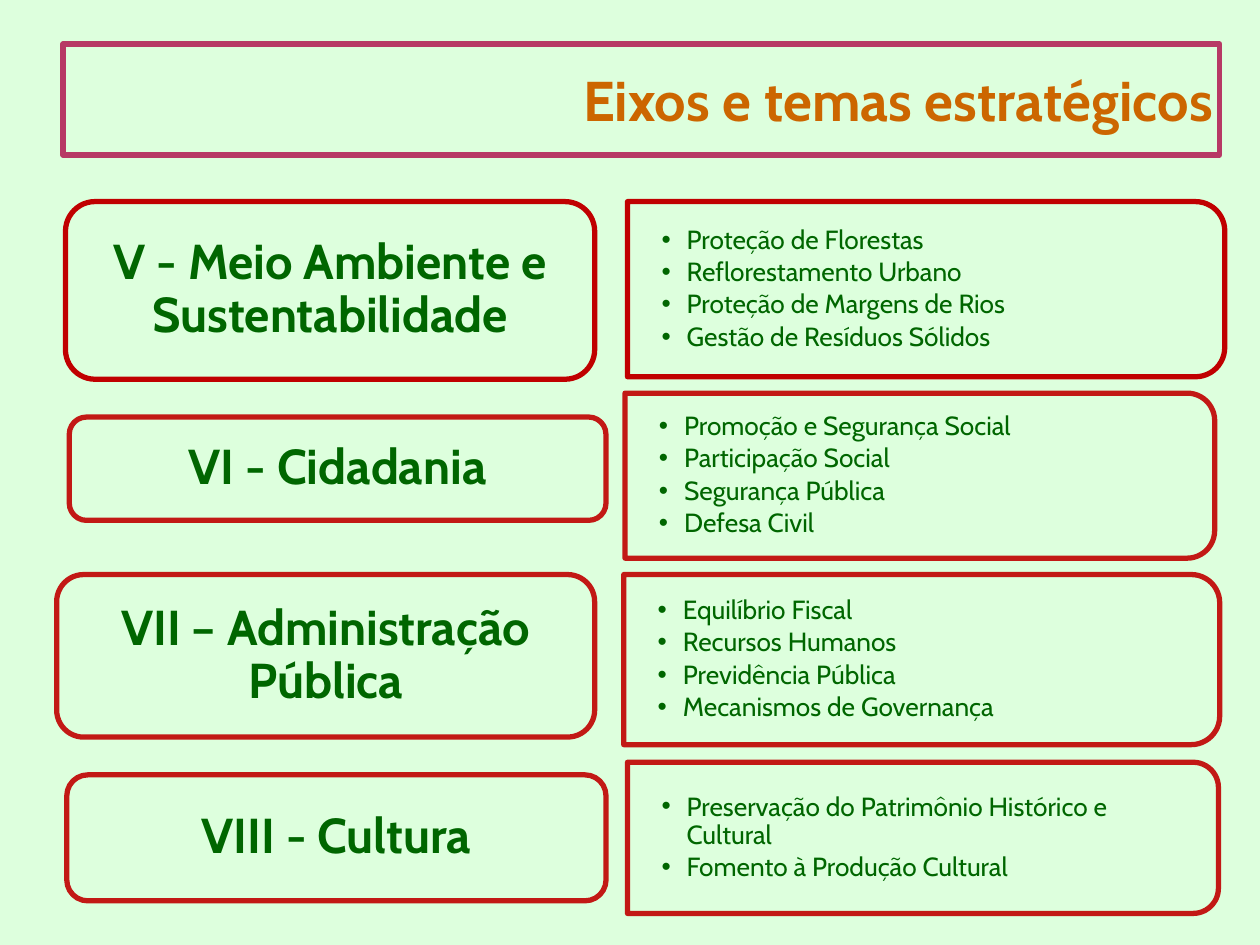
from dataclasses import dataclass

from lxml.etree import SubElement
from pptx import Presentation
from pptx.dml.color import RGBColor
from pptx.enum.shapes import MSO_SHAPE
from pptx.enum.text import MSO_ANCHOR, MSO_AUTO_SIZE, PP_ALIGN
from pptx.oxml.ns import qn
from pptx.util import Inches, Pt

FONT = "Cabin"
GREEN = "006600"
RED = "C00000"


@dataclass
class Box:
    left: float
    top: float
    width: float
    height: float


@dataclass
class Axis:
    name: str
    label: Box
    panel: Box
    themes: list[str]
    alpha: int = 90


AXES = [
    Axis("V - Meio Ambiente e Sustentabilidade",
         Box(0.52, 1.6, 4.2, 1.41), Box(4.98, 1.6, 4.74, 1.39),
         ["Proteção de Florestas", "Reflorestamento Urbano",
          "Proteção de Margens de Rios", "Gestão de Resíduos Sólidos"], 100),
    Axis("VI - Cidadania",
         Box(0.55, 3.31, 4.26, 0.82), Box(4.96, 3.12, 4.68, 1.31),
         ["Promoção e Segurança Social", "Participação Social",
          "Segurança Pública", "Defesa Civil"]),
    Axis("VII – Administração Pública",
         Box(0.45, 4.56, 4.27, 1.29), Box(4.95, 4.56, 4.73, 1.35),
         ["Equilíbrio Fiscal", "Recursos Humanos",
          "Previdência Pública", "Mecanismos de Governança"]),
    Axis("VIII - Cultura",
         Box(0.53, 6.15, 4.28, 1), Box(4.98, 6.05, 4.69, 1.2),
         ["Preservação do Patrimônio Histórico e Cultural",
          "Fomento à Produção Cultural"]),
]


def color(code: str) -> RGBColor:
    return RGBColor.from_string(code)


def style(para, size: float, code: str, bold: bool) -> None:
    font = para.font
    font.name, font.size, font.bold = FONT, Pt(size), bold
    font.color.rgb = color(code)


def place(shape, box: Box) -> None:
    shape.left, shape.top = Inches(box.left), Inches(box.top)
    shape.width, shape.height = Inches(box.width), Inches(box.height)


def setup(frame, side: float, edge: float) -> None:
    """Centre the text vertically, wrap it and set its margins."""
    frame.auto_size = MSO_AUTO_SIZE.NONE
    frame.word_wrap = True
    frame.vertical_anchor = MSO_ANCHOR.MIDDLE
    frame.margin_left = frame.margin_right = Inches(side)
    frame.margin_top = frame.margin_bottom = Inches(edge)


def stroke(shape, code: str, alpha: int = 100) -> None:
    shape.fill.background()
    shape.line.color.rgb = color(code)
    shape.line.width = Pt(3)
    if alpha < 100:
        tint = shape.line._ln.find(".//" + qn("a:srgbClr"))
        SubElement(tint, qn("a:alpha"), val=str(alpha * 1000))


def outline(slide, kind: MSO_SHAPE, box: Box, alpha: int):
    shape = slide.shapes.add_shape(kind, 0, 0, 0, 0)
    place(shape, box)
    shape.shadow.inherit = False
    stroke(shape, RED, alpha)
    return shape


def draw_title(title) -> None:
    place(title, Box(0.5, 0.35, 9.18, 0.88))
    stroke(title, "B73965")
    frame = title.text_frame
    setup(frame, 0.05, 0)
    frame.text = "Eixos e temas estratégicos"
    para = frame.paragraphs[0]
    para.alignment = PP_ALIGN.RIGHT
    style(para, 32, "CC6600", True)


def draw_label(slide, axis: Axis) -> None:
    shape = outline(slide, MSO_SHAPE.ROUNDED_RECTANGLE, axis.label, axis.alpha)
    frame = shape.text_frame
    setup(frame, 0.12, 0.06)
    frame.text = axis.name
    para = frame.paragraphs[0]
    para.alignment = PP_ALIGN.CENTER
    para.line_spacing = 0.9
    style(para, 28, GREEN, True)


def draw_panel(slide, axis: Axis) -> None:
    """Turn a shape with two round top corners so they face right."""
    box = axis.panel
    turned = Box(box.left + (box.width - box.height) / 2,
                 box.top + (box.height - box.width) / 2,
                 box.height, box.width)
    shape = outline(slide, MSO_SHAPE.ROUND_2_SAME_RECTANGLE, turned, axis.alpha)
    shape.rotation = 90


def fill_list(body, axis: Axis) -> None:
    box = axis.panel
    place(body, Box(box.left, box.top + 0.07, box.width - 0.09, box.height - 0.14))
    frame = body.text_frame
    setup(frame, 0.27, 0.14)
    frame.text = "\n".join(axis.themes)
    for para in frame.paragraphs:
        props = para._p.get_or_add_pPr()
        props.set("marL", str(Inches(0.2)))
        props.set("indent", str(Inches(-0.2)))
        SubElement(props, qn("a:buChar"), char="•")
        para.line_spacing = 0.9
        para.space_before = Pt(0)
        para.space_after = Pt(2.25)
        style(para, 15, GREEN, False)


def main() -> None:
    deck = Presentation()
    deck.slide_width, deck.slide_height = Inches(10), Inches(7.5)
    # The comparison layout offers a title and four bodies
    slide = deck.slides.add_slide(deck.slide_layouts[4])
    fill = slide.background.fill
    fill.solid()
    fill.fore_color.rgb = color("DDFFDD")

    draw_title(slide.shapes.title)
    for spot, axis in enumerate(AXES, start=1):
        draw_panel(slide, axis)
        fill_list(slide.placeholders[spot], axis)
        draw_label(slide, axis)
    deck.save("out.pptx")


if __name__ == "__main__":
    main()
